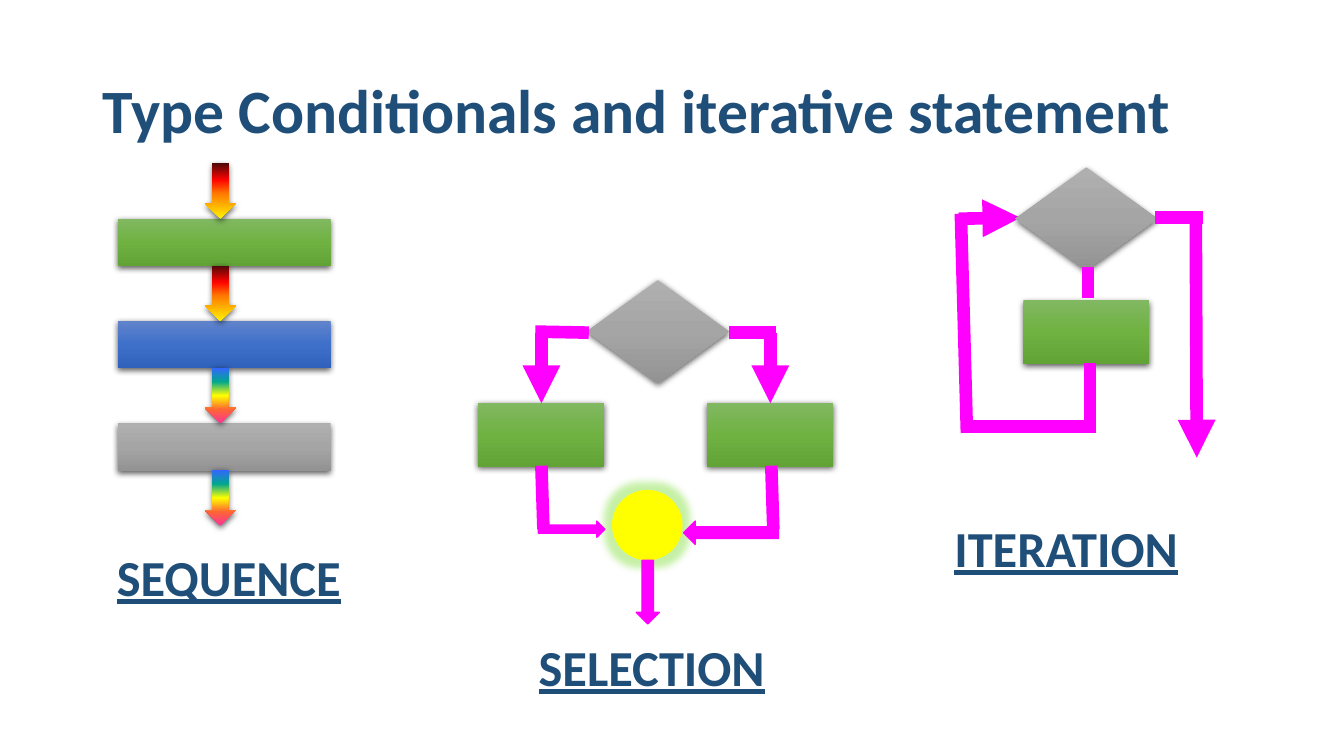
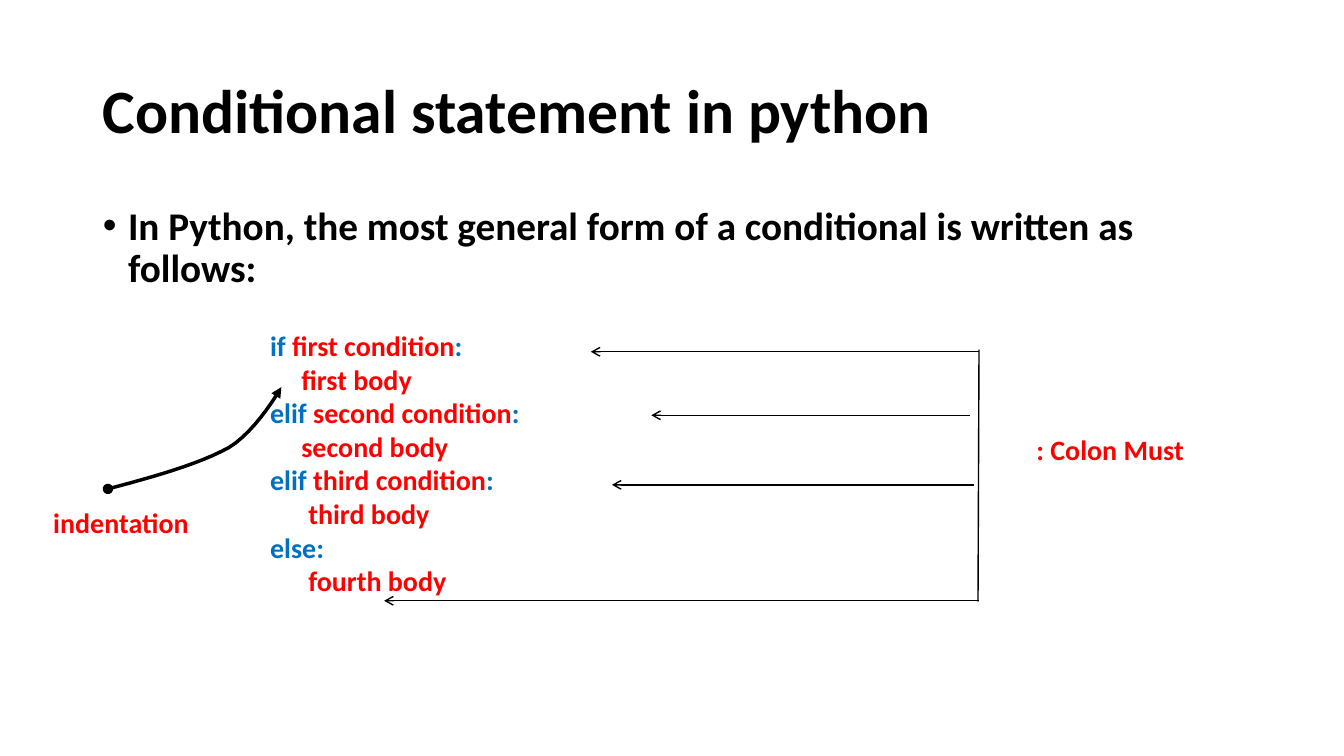
from lxml.etree import SubElement
from pptx import Presentation
from pptx.dml.color import RGBColor
from pptx.enum.shapes import MSO_CONNECTOR as Connector, MSO_SHAPE as Shape
from pptx.enum.text import MSO_ANCHOR as Anchor, MSO_AUTO_SIZE as AutoSize, PP_ALIGN as Align
from pptx.oxml.ns import qn
from pptx.util import Inches, Pt

FONT = "Calibri"
NAVY = RGBColor(0x1F, 0x4E, 0x79)
BLACK = RGBColor(0, 0, 0)
RED = RGBColor(0xFF, 0, 0)
BLUE = RGBColor(0, 0x70, 0xC0)
MAGENTA = RGBColor(0xFF, 0, 0xFF)
YELLOW = RGBColor(0xFF, 0xFF, 0)
GLOW = RGBColor(0x70, 0xDB, 0x20)

GREEN_FADE = (90, [(0, "81B861"), (50, "6FB242"), (100, "62A336")])
BLUE_FADE = (90, [(0, "6183CB"), (50, "3E70CA"), (100, "3062BB")])
GREY_FADE = (90, [(0, "AFAFAF"), (50, "A5A5A5"), (100, "939393")])
FIRE_FADE = (270, [(0, "FFF200"), (45, "FF7A00"), (70, "FF0300"), (100, "4D0808")])
RAINBOW_FADE = (270, [(0, "FF3399"), (25, "FF6633"), (50, "FFFF00"),
                      (75, "01A78F"), (100, "3366FF")])

TITLE_BOX = (0.92, 0.4, 11.5, 1.45)
BODY_BOX = (0.92, 2, 11.5, 4.76)
DECISION_SIZE = (1.41, 1.02)
STEP_SIZE = (1.25, 0.63)

SEQUENCE_FADES = [GREEN_FADE, BLUE_FADE, GREY_FADE]
SEQUENCE_ARROWS = [FIRE_FADE, FIRE_FADE, RAINBOW_FADE, RAINBOW_FADE]
SEQUENCE_TOP, SEQUENCE_PITCH = 1.62, 1.015

CAPTIONS = [
    ("SEQUENCE", (0.94, 5.37, 2.66, 0.71)),
    ("SELECTION", (4.98, 6.26, 2.97, 0.71)),
    ("ITERATION", (9.21, 5.08, 2.73, 0.71)),
]
SELECTION_STEPS = [(4.74, 4), (7.01, 4)]
SELECTION_LINES = [
    ((5.37, 4.62), (5.39, 5.25), None),
    ((5.37, 3.3), (5.37, 4), "triangle"),
    ((7.64, 3.3), (7.64, 4), "triangle"),
    ((5.31, 3.29), (5.84, 3.3), None),
    ((7.23, 3.3), (7.7, 3.3), None),
    ((7.65, 4.62), (7.67, 5.25), None),
]
SELECTION_ARROWS = [
    (Shape.RIGHT_ARROW, (5.34, 5.17, 0.66, 0.16)),
    (Shape.DOWN_ARROW, (6.31, 5.56, 0.23, 0.63)),
    (Shape.LEFT_ARROW, (6.78, 5.17, 0.94, 0.23)),
]
ITERATION_ENTRY = ((9.51, 2.17), (10.12, 2.16), "triangle")
ITERATION_LINES = [
    ((11.46, 2.16), (11.93, 2.16), None),
    ((11.86, 2.11), (11.87, 4.54), "triangle"),
    ((10.79, 2.65), (10.79, 2.96), None),
    ((10.85, 4.23), (9.53, 4.23), None),
    ((9.53, 2.12), (9.59, 4.29), None),
    ((10.81, 3.6), (10.81, 4.3), None),
]

CODE_LINES = [
    (0, [("if", BLUE), (" first condition", RED), (":", BLUE)]),
    (0.31, [("first body", RED)]),
    (0, [("elif", BLUE), (" second condition", RED), (":", BLUE)]),
    (0.31, [("second body", RED)]),
    (0, [("elif ", BLUE), ("third condition", RED), (":", BLUE)]),
    (0.38, [("third body", RED)]),
    (0, [("else:", BLUE)]),
    (0.38, [("fourth body", RED)]),
]
NOTES = [
    (": Colon Must", (9.6, 4.1, 2.82, 0.72)),
    ("indentation", (-0.16, 4.88, 2.72, 0.6)),
]
COLON_LINES = [
    ((9.71, 3.49), (5.86, 3.49), "arrow"),
    ((9.71, 3.47), (9.7, 5.97), None),
    ((9.62, 4.12), (6.46, 4.12), "arrow"),
    ((9.66, 4.81), (6.07, 4.81), "arrow"),
    ((9.71, 5.96), (3.81, 5.96), "arrow"),
]
INDENT_CURVES = [
    ((1.07, 4.85), (1.53, 4.73), (1.98, 4.6), (2.27, 4.44)),
    ((2.27, 4.44), (2.55, 4.27), (2.79, 3.84), (2.79, 3.84)),
]
CURVE_STEPS = 12


def inches(values):
    return [Inches(value) for value in values]


def add_run(paragraph, text, size, color, underline=None):
    run = paragraph.add_run()
    run.text = text
    font = run.font
    font.name, font.size, font.bold, font.underline = FONT, Pt(size), True, underline
    font.color.rgb = color


def set_indent(paragraph, left, first=0):
    properties = paragraph._p.get_or_add_pPr()
    properties.set("marL", str(Inches(left)))
    properties.set("indent", str(Inches(first)))
    return properties


def fill_placeholder(placeholder, box, text, size, color, anchor):
    placeholder.left, placeholder.top, placeholder.width, placeholder.height = inches(box)
    frame = placeholder.text_frame
    frame.auto_size, frame.word_wrap = AutoSize.NONE, True
    frame.vertical_anchor = anchor
    paragraph = frame.paragraphs[0]
    paragraph.alignment, paragraph.line_spacing = Align.LEFT, 0.9
    add_run(paragraph, text, size, color)
    return paragraph


def add_titled_slide(presentation, layout_index, title, color):
    slide = presentation.slides.add_slide(presentation.slide_layouts[layout_index])
    fill_placeholder(slide.shapes.title, TITLE_BOX, title, 44, color, Anchor.MIDDLE)
    return slide


def add_text_box(slide, box, anchor=Anchor.TOP):
    frame = slide.shapes.add_textbox(*inches(box)).text_frame
    frame.word_wrap, frame.vertical_anchor = True, anchor
    return frame


def add_label(slide, text, box, size, color, anchor=Anchor.TOP, underline=None):
    paragraph = add_text_box(slide, box, anchor).paragraphs[0]
    paragraph.alignment = Align.CENTER
    add_run(paragraph, text, size, color, underline)


def add_effect(shape, tag, color, alpha, **attributes):
    effects = shape._element.spPr.find(qn("a:effectLst"))
    effect = SubElement(effects, qn(tag), {key: str(value) for key, value in attributes.items()})
    tint = SubElement(effect, qn("a:srgbClr"), val=str(color))
    SubElement(tint, qn("a:alpha"), val=str(alpha * 1000))


def add_solid_shape(slide, kind, box, color, line_color):
    shape = slide.shapes.add_shape(kind, *inches(box))
    shape.shadow.inherit = False
    shape.fill.solid()
    shape.fill.fore_color.rgb = color
    shape.line.color.rgb = line_color
    shape.line.width = Pt(1)
    return shape


def add_fade_shape(slide, kind, box, fade):
    angle, stops = fade
    shape = slide.shapes.add_shape(kind, *inches(box))
    shape.fill.gradient()
    gradient = shape._element.spPr.find(qn("a:gradFill"))
    stop_list = gradient.find(qn("a:gsLst"))
    for old_stop in list(stop_list):
        stop_list.remove(old_stop)
    for position, color in stops:
        stop = SubElement(stop_list, qn("a:gs"), pos=str(position * 1000))
        SubElement(stop, qn("a:srgbClr"), val=color)
    gradient.find(qn("a:lin")).set("ang", str(angle * 60000))
    shape.line.fill.background()
    shape.shadow.inherit = False
    add_effect(shape, "a:outerShdw", BLACK, 63, blurRad=Pt(4.5), dist=Pt(1.5),
               dir=90 * 60000, rotWithShape=0)


def style_line(shape, color, width, head=None, tail=None):
    shape.line.color.rgb = color
    shape.line.width = Pt(width)
    for tag, end in (("a:headEnd", head), ("a:tailEnd", tail)):
        if end:
            SubElement(shape.line._get_or_add_ln(), qn(tag), type=end)


def add_line(slide, start, end, tail, color, width):
    connector = slide.shapes.add_connector(Connector.STRAIGHT, *inches(start + end))
    style_line(connector, color, width, tail=tail)
    SubElement(connector._element.spPr, qn("a:effectLst"))


def bezier_point(curve, t):
    weights = ((1 - t) ** 3, 3 * t * (1 - t) ** 2, 3 * t * t * (1 - t), t ** 3)
    return inches(sum(w * point[axis] for w, point in zip(weights, curve)) for axis in (0, 1))


def draw_sequence(slide):
    for index, fade in enumerate(SEQUENCE_FADES):
        top = SEQUENCE_TOP + 0.55 + index * SEQUENCE_PITCH
        add_fade_shape(slide, Shape.RECTANGLE, (1.17, top, 2.11, 0.47), fade)
    for index, fade in enumerate(SEQUENCE_ARROWS):
        top = SEQUENCE_TOP + index * SEQUENCE_PITCH
        add_fade_shape(slide, Shape.DOWN_ARROW, (2.03, top, 0.31, 0.55), fade)


def draw_selection(slide):
    add_fade_shape(slide, Shape.FLOWCHART_DECISION, (5.82, 2.78) + DECISION_SIZE, GREY_FADE)
    for corner in SELECTION_STEPS:
        add_fade_shape(slide, Shape.RECTANGLE, corner + STEP_SIZE, GREEN_FADE)
    junction = add_solid_shape(slide, Shape.FLOWCHART_CONNECTOR, (6.07, 4.86, 0.7, 0.7),
                               YELLOW, YELLOW)
    junction.line.fill.background()
    add_effect(junction, "a:glow", GLOW, 40, rad=Pt(11))
    for line in SELECTION_LINES:
        add_line(slide, *line, MAGENTA, 9)
    for kind, box in SELECTION_ARROWS:
        add_solid_shape(slide, kind, box, MAGENTA, MAGENTA)


def draw_iteration(slide):
    add_line(slide, *ITERATION_ENTRY, MAGENTA, 9)
    add_fade_shape(slide, Shape.FLOWCHART_DECISION, (10.07, 1.66) + DECISION_SIZE, GREY_FADE)
    add_fade_shape(slide, Shape.RECTANGLE, (10.15, 2.98) + STEP_SIZE, GREEN_FADE)
    for line in ITERATION_LINES:
        add_line(slide, *line, MAGENTA, 9)


def build_flow_slide(presentation):
    slide = add_titled_slide(presentation, 5, "Type Conditionals and iterative statement", NAVY)
    draw_sequence(slide)
    draw_selection(slide)
    draw_iteration(slide)
    for text, box in CAPTIONS:
        add_label(slide, text, box, 36, NAVY, underline=True)


def build_syntax_slide(presentation):
    slide = add_titled_slide(presentation, 1, "Conditional statement in python", BLACK)
    bullet = fill_placeholder(
        slide.placeholders[1], BODY_BOX,
        "In Python, the most general form of a conditional is written as follows:",
        28, BLACK, Anchor.TOP)
    bullet.space_before = Pt(10)
    SubElement(set_indent(bullet, 0.25, -0.25), qn("a:buChar"), char="•")

    frame = add_text_box(slide, (2.58, 3.21, 6.68, 2.79))
    for index, (indent, runs) in enumerate(CODE_LINES):
        paragraph = frame.add_paragraph() if index else frame.paragraphs[0]
        set_indent(paragraph, indent)
        for text, color in runs:
            add_run(paragraph, text, 20, color)

    for line in COLON_LINES:
        add_line(slide, *line, BLACK, 1)
    points = [bezier_point(curve, step / CURVE_STEPS)
              for curve in INDENT_CURVES for step in range(1, CURVE_STEPS + 1)]
    builder = slide.shapes.build_freeform(*inches(INDENT_CURVES[0][0]))
    builder.add_line_segments(points, close=False)
    pointer = builder.convert_to_shape()
    pointer.fill.background()
    pointer.shadow.inherit = False
    style_line(pointer, BLACK, 2.5, head="oval", tail="triangle")
    for text, box in NOTES:
        add_label(slide, text, box, 20, RED, Anchor.MIDDLE)


def main():
    presentation = Presentation()
    presentation.slide_width, presentation.slide_height = Inches(13.33), Inches(7.5)
    build_flow_slide(presentation)
    build_syntax_slide(presentation)
    presentation.save("out.pptx")


if __name__ == "__main__":
    main()
